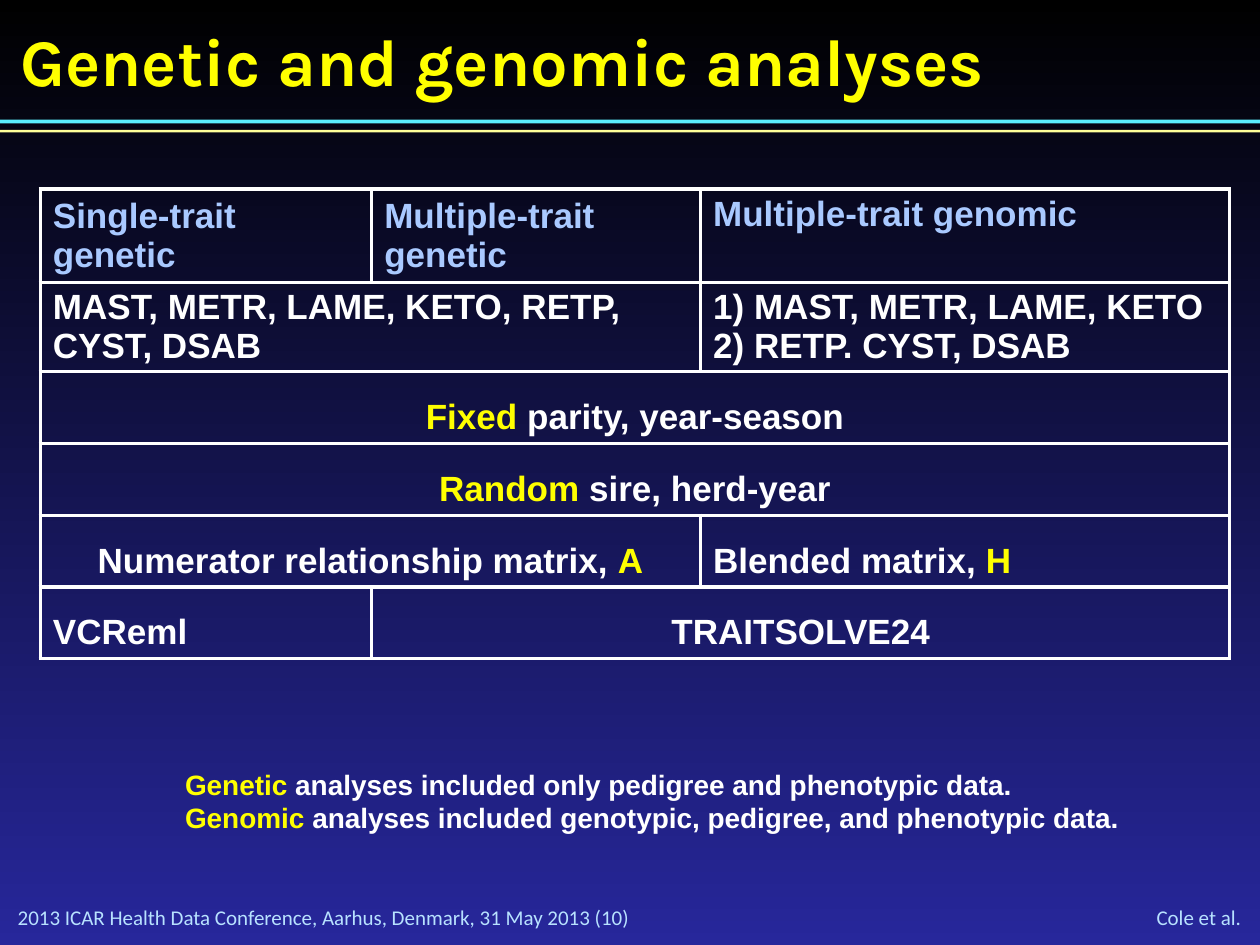
from lxml.etree import SubElement
from pptx import Presentation
from pptx.dml.color import RGBColor
from pptx.enum.shapes import MSO_SHAPE
from pptx.enum.text import MSO_ANCHOR, PP_ALIGN
from pptx.oxml.ns import qn
from pptx.util import Inches, Pt

WHITE, YELLOW, BLUE, PALE = "FFFFFF", "FFFF00", "A9C9FF", "B8E2FF"

# Content: each paragraph is a list of (text, colour) spans
TITLE = [[("Genetic and genomic analyses", YELLOW)]]
FOOTER = [[("2013 ICAR Health Data Conference, Aarhus, Denmark, 31 May 2013 (10)", PALE)]]
AUTHORS = [[("Cole et al.", PALE)]]
NOTES = [
    [("Genetic", YELLOW), (" analyses included only pedigree and phenotypic data.", WHITE)],
    [("Genomic", YELLOW), (" analyses included genotypic, pedigree, and phenotypic data.", WHITE)],
]
RULES = [(0.95, 0.03, "5BEFFF"), (1.03, 0.02, "FFFF99")]  # top, height, colour

COLUMNS = [2.63, 2.61, 4.2]
ROWS = [0.74, 0.71] + [0.57] * 4
LEFT, CENTER, RIGHT = PP_ALIGN.LEFT, PP_ALIGN.CENTER, PP_ALIGN.RIGHT
MIDDLE, TOP = MSO_ANCHOR.MIDDLE, MSO_ANCHOR.TOP
# row, column, columns spanned, alignment, line spacing, anchor, paragraphs
CELLS = [
    (0, 0, 1, LEFT, 1, MIDDLE, [[("Single-trait genetic", BLUE)]]),
    (0, 1, 1, LEFT, 1, MIDDLE, [[("Multiple-trait genetic", BLUE)]]),
    (0, 2, 1, LEFT, 1, TOP, [[("Multiple-trait genomic", BLUE)]]),
    (1, 0, 2, LEFT, 1, MIDDLE, [[("MAST, METR, LAME, KETO, RETP, CYST, DSAB", WHITE)]]),
    (1, 2, 1, LEFT, 1, MIDDLE, [[("1) MAST, METR, LAME, KETO", WHITE)],
                                [("2) RETP. CYST, DSAB", WHITE)]]),
    (2, 0, 3, CENTER, 1.5, MIDDLE, [[("Fixed", YELLOW), (" parity, year-season", WHITE)]]),
    (3, 0, 3, CENTER, 1.5, MIDDLE, [[("Random", YELLOW), (" sire, herd-year", WHITE)]]),
    (4, 0, 2, CENTER, 1.5, MIDDLE, [[("Numerator relationship matrix, ", WHITE), ("A", YELLOW)]]),
    (4, 2, 1, LEFT, 1.5, MIDDLE, [[("Blended matrix, ", WHITE), ("H", YELLOW)]]),
    (5, 0, 1, LEFT, 1.5, MIDDLE, [[("VCReml", WHITE)]]),
    (5, 1, 2, CENTER, 1.5, MIDDLE, [[("TRAITSOLVE24", WHITE)]]),
]


def color(value):
    return RGBColor.from_string(value)


def write(frame, paragraphs, size=20, font="Arial", bold=True, align=LEFT, spacing=1):
    for index, spans in enumerate(paragraphs):
        para = frame.add_paragraph() if index else frame.paragraphs[0]
        para.alignment = align
        para.line_spacing = spacing
        for text, shade in spans:
            span = para.add_run()
            span.text = text
            span.font.size = Pt(size)
            span.font.name = font
            span.font.bold = bold
            span.font.color.rgb = color(shade)


def add_text(page, place, paragraphs, anchor=TOP, inset=True, wrap=True, **text_format):
    box = page.shapes.add_textbox(*map(Inches, place))
    frame = box.text_frame
    frame.word_wrap = wrap
    frame.vertical_anchor = anchor
    if not inset:
        frame.margin_left = frame.margin_right = frame.margin_top = frame.margin_bottom = 0
    write(frame, paragraphs, **text_format)


def add_borders(cell, shade, width):
    properties = cell._tc.get_or_add_tcPr()
    for index, side in enumerate(("a:lnL", "a:lnR", "a:lnT", "a:lnB")):
        line = SubElement(properties, qn(side), w=str(Pt(width)))
        properties.insert(index, line)
        fill = SubElement(line, qn("a:solidFill"))
        SubElement(fill, qn("a:srgbClr"), val=shade)


def add_analysis_table(page):
    table = page.shapes.add_table(len(ROWS), len(COLUMNS), Inches(0.32), Inches(1.5),
                                  Inches(sum(COLUMNS)), Inches(sum(ROWS))).table
    table.first_row = table.horz_banding = False
    for column, width in zip(table.columns, COLUMNS):
        column.width = Inches(width)
    for row, height in zip(table.rows, ROWS):
        row.height = Inches(height)
    for cell in table.iter_cells():
        cell.fill.background()
        cell.margin_top = cell.margin_bottom = Inches(0.02)
        add_borders(cell, WHITE, 2.25)
    for row, column, columns, align, spacing, anchor, paragraphs in CELLS:
        cell = table.cell(row, column)
        if columns > 1:
            cell.merge(table.cell(row, column + columns - 1))
        cell.vertical_anchor = anchor
        if anchor == TOP:
            cell.margin_top = Inches(0.05)
        write(cell.text_frame, paragraphs, align=align, spacing=spacing)


def main():
    deck = Presentation()
    deck.slide_width, deck.slide_height = Inches(10), Inches(7.5)
    page = deck.slides.add_slide(deck.slide_layouts[6])

    # Background, dark at the top
    backdrop = page.background.fill
    backdrop.gradient()
    backdrop.gradient_angle = 270
    for stop, position, shade in zip(backdrop.gradient_stops, (0, 1), ("000000", "27279B")):
        stop.position = position
        stop.color.rgb = color(shade)

    # Rules under the title
    for top, height, shade in RULES:
        rule = page.shapes.add_shape(MSO_SHAPE.RECTANGLE, 0, Inches(top),
                                     deck.slide_width, Inches(height))
        rule.shadow.inherit = False
        rule.fill.solid()
        rule.fill.fore_color.rgb = color(shade)
        rule.line.fill.background()

    # Title, table and notes
    add_text(page, (0.16, 0.16, 9, 0.64), TITLE, inset=False, size=38, font="Karla")
    add_analysis_table(page)
    add_text(page, (1.37, 6.04, 7.71, 0.64), NOTES, wrap=False, size=16)

    # Footer
    small = dict(anchor=MIDDLE, inset=False, size=12, font="Calibri", bold=False)
    add_text(page, (0.14, 7.18, 5.78, 0.2), FOOTER, **small)
    add_text(page, (8.72, 7.17, 1.13, 0.21), AUTHORS, align=RIGHT, **small)

    deck.save("out.pptx")


if __name__ == "__main__":
    main()
